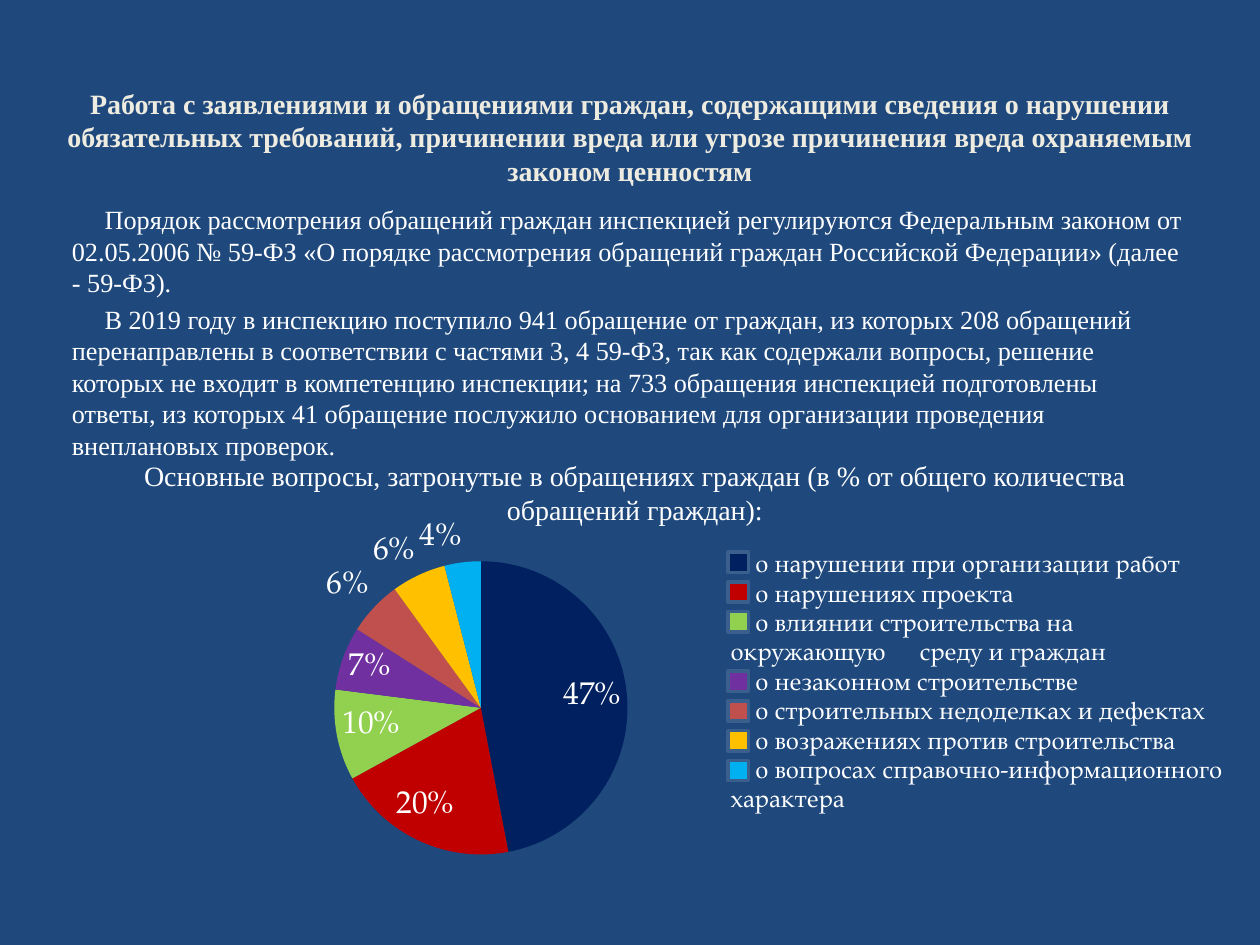
from lxml.etree import SubElement
from pptx import Presentation
from pptx.chart.data import CategoryChartData
from pptx.dml.color import RGBColor
from pptx.enum.chart import XL_CHART_TYPE, XL_LABEL_POSITION
from pptx.enum.shapes import MSO_SHAPE
from pptx.enum.text import MSO_ANCHOR, PP_ALIGN
from pptx.oxml.ns import qn
from pptx.util import Cm, Pt

SERIF, PALATINO = "Times New Roman", "TeX Gyre Pagella"
WHITE = "FFFFFF"
TITLE = (
    "Работа с заявлениями и обращениями граждан, содержащими сведения о нарушении "
    "обязательных требований, причинении вреда или угрозе причинения вреда охраняемым "
    "законом ценностям"
)
BODY = [
    "Порядок рассмотрения обращений граждан инспекцией регулируются Федеральным законом от "
    "02.05.2006 № 59-ФЗ «О порядке рассмотрения обращений граждан Российской Федерации» "
    "(далее - 59-ФЗ).",
    "В 2019 году в инспекцию поступило 941 обращение от граждан, из которых 208 обращений "
    "перенаправлены в соответствии с частями 3, 4 59-ФЗ, так как содержали вопросы, решение "
    "которых не входит в компетенцию инспекции; на 733 обращения инспекцией подготовлены "
    "ответы, из которых 41 обращение послужило основанием для организации проведения "
    "внеплановых проверок.",
]
CHART_HEADING = (
    "Основные вопросы, затронутые в обращениях граждан "
    "(в % от общего количества обращений граждан):"
)
TOPICS = [
    ("о нарушении при организации работ", 0.47, "002060", 1),
    ("о нарушениях проекта", 0.2, "C00000", 1),
    ("о влиянии строительства на окружающую\tсреду и граждан", 0.1, "92D050", 2),
    ("о незаконном строительстве", 0.07, "7030A0", 1),
    ("о строительных недоделках и дефектах", 0.06, "C0504D", 1),
    ("о возражениях против строительства", 0.06, "FFC000", 1),
    ("о вопросах справочно-информационного характера", 0.04, "00B0F0", 2),
]
PLOT_LAYOUT = {"x": 0.32, "y": 0.15, "w": 0.46, "h": 0.73}
SWATCH_LEFT, SWATCH_TOP, SWATCH_SIZE, LINE_PITCH = 14.68, 11.13, 0.41, 0.6


def color(value):
    return RGBColor.from_string(value)


def add_text(slide, paragraphs, box, size, font=SERIF, fill=WHITE, bold=False,
             align=PP_ALIGN.LEFT, anchor=MSO_ANCHOR.TOP, indent=0, before=0,
             margins=(0.25, 0.13, 0.25, 0.13), tab=None):
    """Add a wrapped text box whose paragraphs share one format."""
    frame = slide.shapes.add_textbox(*map(Cm, box)).text_frame
    frame.word_wrap = True
    frame.vertical_anchor = anchor
    (frame.margin_left, frame.margin_top,
     frame.margin_right, frame.margin_bottom) = map(Cm, margins)
    for index, text in enumerate(paragraphs):
        paragraph = frame.add_paragraph() if index else frame.paragraphs[0]
        paragraph.alignment = align
        paragraph.space_before = Pt(before)
        properties = paragraph._p.get_or_add_pPr()
        properties.set("indent", str(Cm(indent)))
        if tab:
            stops = SubElement(properties, qn("a:tabLst"))
            SubElement(stops, qn("a:tab"), pos=str(Cm(tab)), algn="l")
        run = paragraph.add_run()
        run.text = text
        run.font.name, run.font.size, run.font.bold = font, Pt(size), bold
        run.font.color.rgb = color(fill)


def add_pie(slide):
    """Add the pie of topic shares."""
    data = CategoryChartData(number_format="0%")
    data.categories = [str(number) for number in range(1, len(TOPICS) + 1)]
    data.add_series("Series 1", [share for _, share, _, _ in TOPICS])
    chart = slide.shapes.add_chart(
        XL_CHART_TYPE.PIE, Cm(2.6), Cm(10.1), Cm(12.9), Cm(8.1), data).chart
    chart.has_legend = chart.has_title = False
    chart.font.name, chart.font.size = PALATINO, Pt(18)
    chart.font.color.rgb = color(WHITE)
    plot = chart.plots[0]
    plot.vary_by_categories = True
    for index, (_, _, fill, _) in enumerate(TOPICS):
        slice_fill = plot.series[0].points[index].format.fill
        slice_fill.solid()
        slice_fill.fore_color.rgb = color(fill)
    plot.has_data_labels = True
    labels = plot.data_labels
    labels.show_value, labels.show_percentage = True, False
    labels.number_format, labels.number_format_is_linked = "0%", False
    labels.position = XL_LABEL_POSITION.BEST_FIT
    area = chart._chartSpace.chart.plotArea
    for layout in area.findall(qn("c:layout")):
        area.remove(layout)
    layout = area.makeelement(qn("c:layout"))
    area.insert(0, layout)
    manual = SubElement(layout, qn("c:manualLayout"))
    SubElement(manual, qn("c:layoutTarget"), val="inner")
    for axis in "xy":
        SubElement(manual, qn(f"c:{axis}Mode"), val="edge")
    for name, value in PLOT_LAYOUT.items():
        SubElement(manual, qn(f"c:{name}"), val=str(value))


def add_legend(slide):
    """Add topic names with a colour swatch at the first line of each."""
    add_text(slide, [name for name, _, _, _ in TOPICS], (14.48, 10.92, 10.52, 5.64), 14,
             font=PALATINO, indent=0.5, tab=4)
    line = 0
    for _, _, fill, line_count in TOPICS:
        swatch = slide.shapes.add_shape(
            MSO_SHAPE.RECTANGLE, Cm(SWATCH_LEFT), Cm(SWATCH_TOP + line * LINE_PITCH),
            Cm(SWATCH_SIZE), Cm(SWATCH_SIZE))
        swatch.shadow.inherit = False
        swatch.fill.solid()
        swatch.fill.fore_color.rgb = color(fill)
        swatch.line.color.rgb = color("3A5F8C")
        swatch.line.width = Pt(2)
        line += line_count


def main():
    """Build the slide on citizens' appeals."""
    presentation = Presentation()
    presentation.slide_width, presentation.slide_height = Cm(25.4), Cm(19.05)
    slide = presentation.slides.add_slide(presentation.slide_layouts[6])
    slide.background.fill.solid()
    slide.background.fill.fore_color.rgb = color("1F497D")
    add_text(slide, [TITLE], (0.6, 0.6, 24.2, 3.17), 16, fill="EEECE1", bold=True,
             align=PP_ALIGN.CENTER, anchor=MSO_ANCHOR.BOTTOM, margins=(0, 0.13, 0, 0))
    add_text(slide, BODY, (1.2, 3.97, 22.93, 5.33), 15, indent=0.66, before=3)
    add_text(slide, [CHART_HEADING], (1.4, 9.12, 22.8, 1.62), 16, align=PP_ALIGN.CENTER)
    add_pie(slide)
    add_legend(slide)
    presentation.save("out.pptx")


if __name__ == "__main__":
    main()
